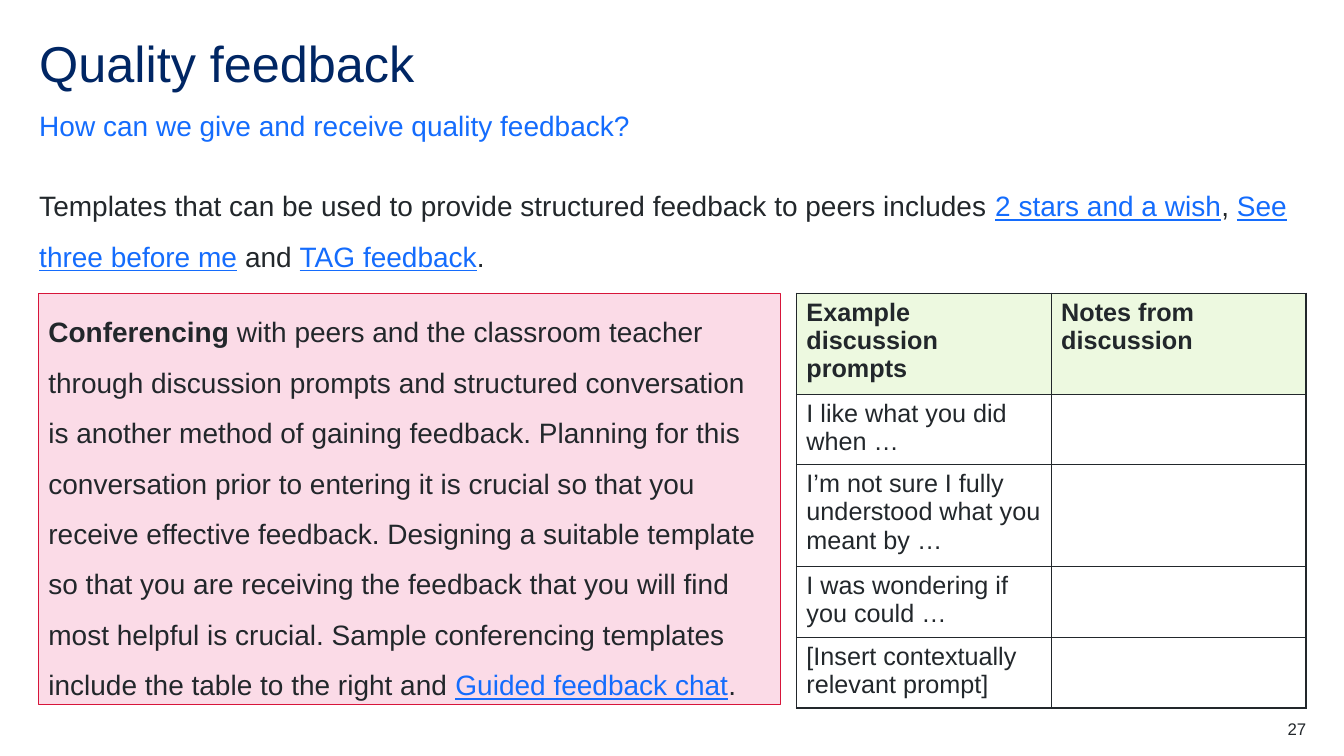
from dataclasses import dataclass

from lxml.etree import SubElement
from pptx import Presentation
from pptx.dml.color import RGBColor
from pptx.enum.shapes import MSO_SHAPE
from pptx.enum.text import MSO_ANCHOR as Anchor, MSO_AUTO_SIZE as AutoSize, PP_ALIGN as Align
from pptx.oxml.ns import qn
from pptx.slide import Slide
from pptx.table import _Cell as Cell
from pptx.text.text import TextFrame, _Paragraph as Paragraph
from pptx.util import Cm, Pt

FONT = "Arial"
NAVY = RGBColor(0x00, 0x26, 0x64)
BLUE = RGBColor(0x14, 0x6C, 0xFD)
INK = RGBColor(0x22, 0x27, 0x2B)
RED = RGBColor(0xD7, 0x15, 0x3A)
PINK = RGBColor(0xFB, 0xDB, 0xE7)
GREEN = RGBColor(0xED, 0xF9, 0xE0)

LEFT = 0.99
CONTENT_WIDTH = 31.9
PANEL_TOP = 7.39


@dataclass(frozen=True)
class Span:
    text: str
    bold: bool = False
    link: bool = False


@dataclass(frozen=True)
class TextBlock:
    """A text box; lengths are in centimetres, sizes in points."""
    spans: tuple[Span, ...]
    left: float
    top: float
    width: float
    height: float
    size: int
    color: RGBColor
    line_spacing: float = 1.0
    space_after: int = 0
    anchor: Anchor = Anchor.TOP
    align: Align = Align.LEFT


TEXT_BLOCKS = (
    TextBlock((Span("Quality feedback"),), LEFT, 0.99, CONTENT_WIDTH, 1.52, 36, NAVY, 0.9),
    TextBlock((Span("How can we give and receive quality feedback?"),),
              LEFT, 2.72, CONTENT_WIDTH, 0.86, 20, BLUE, 1.5, 12, Anchor.BOTTOM),
    TextBlock((
        Span("Templates that can be used to provide structured feedback to peers includes "),
        Span("2 stars and a wish", link=True),
        Span(", "),
        Span("See three before me", link=True),
        Span(" and "),
        Span("TAG feedback", link=True),
        Span("."),
    ), LEFT, 4.34, CONTENT_WIDTH, 2.46, 20, INK, 1.5, 12),
    TextBlock((Span("27"),), 30.91, 18.11, 2.01, 0.51, 12, INK, align=Align.RIGHT),
)

CONFERENCING = (
    Span("Conferencing", bold=True),
    Span(" with peers and the classroom teacher through discussion prompts and structured "
         "conversation is another method of gaining feedback. Planning for this conversation "
         "prior to entering it is crucial so that you receive effective feedback. Designing a "
         "suitable template so that you are receiving the feedback that you will find most "
         "helpful is crucial. Sample conferencing templates include the table to the right and "),
    Span("Guided feedback chat", link=True),
    Span("."),
)

PROMPT_ROWS = (
    ("Example discussion prompts", "Notes from discussion"),
    ("I like what you did when …", ""),
    ("I’m not sure I fully understood what you meant by …", ""),
    ("I was wondering if you could …", ""),
    ("[Insert contextually relevant prompt]", ""),
)
ROW_HEIGHTS = (2.54, 1.78, 2.57, 1.78, 1.78)
COLUMN_WIDTH = 6.42


def style_paragraph(paragraph: Paragraph, size: int, color: RGBColor) -> None:
    font = paragraph.font
    font.name, font.size, font.color.rgb = FONT, Pt(size), color


def write_spans(paragraph: Paragraph, spans: tuple[Span, ...]) -> None:
    for span in spans:
        run = paragraph.add_run()
        run.text = span.text
        if span.bold:
            run.font.bold = True
        if span.link:
            run.font.underline = True
            run.font.color.rgb = BLUE


def clear_margins(frame: TextFrame) -> None:
    frame.margin_left = frame.margin_right = frame.margin_top = frame.margin_bottom = 0


def add_text_block(slide: Slide, block: TextBlock) -> None:
    frame = slide.shapes.add_textbox(
        Cm(block.left), Cm(block.top), Cm(block.width), Cm(block.height)).text_frame
    frame.word_wrap = True
    frame.vertical_anchor = block.anchor
    clear_margins(frame)
    paragraph = frame.paragraphs[0]
    paragraph.alignment = block.align
    paragraph.line_spacing = block.line_spacing
    paragraph.space_after = Pt(block.space_after)
    style_paragraph(paragraph, block.size, block.color)
    write_spans(paragraph, block.spans)


def add_conferencing_panel(slide: Slide) -> None:
    panel = slide.shapes.add_shape(
        MSO_SHAPE.RECTANGLE, Cm(0.97), Cm(PANEL_TOP), Cm(18.69), Cm(10.36))
    panel.shadow.inherit = False
    panel.fill.solid()
    panel.fill.fore_color.rgb = PINK
    panel.line.color.rgb = RED
    panel.line.width = Pt(0.75)
    frame = panel.text_frame
    frame.word_wrap = True
    frame.auto_size = AutoSize.SHAPE_TO_FIT_TEXT
    frame.vertical_anchor = Anchor.TOP
    paragraph = frame.paragraphs[0]
    paragraph.alignment = Align.LEFT
    paragraph.line_spacing = 1.5
    style_paragraph(paragraph, 20, INK)
    write_spans(paragraph, CONFERENCING)


def add_borders(cell: Cell) -> None:
    """Draw all four cell edges; they must precede the fill in the XML."""
    properties = cell._tc.get_or_add_tcPr()
    for edge in ("a:lnL", "a:lnR", "a:lnT", "a:lnB"):
        line = SubElement(properties, qn(edge), w=str(Pt(1)))
        fill = SubElement(line, qn("a:solidFill"))
        SubElement(fill, qn("a:srgbClr"), val=str(INK))


def add_prompt_table(slide: Slide) -> None:
    table = slide.shapes.add_table(
        len(PROMPT_ROWS), 2, Cm(20.07), Cm(PANEL_TOP),
        Cm(2 * COLUMN_WIDTH), Cm(sum(ROW_HEIGHTS))).table
    table.first_row = table.horz_banding = False
    for column in table.columns:
        column.width = Cm(COLUMN_WIDTH)
    for row_index, (texts, height) in enumerate(zip(PROMPT_ROWS, ROW_HEIGHTS)):
        row = table.rows[row_index]
        row.height = Cm(height)
        is_header = row_index == 0
        for cell, text in zip(row.cells, texts):
            add_borders(cell)
            if is_header:
                cell.fill.solid()
                cell.fill.fore_color.rgb = GREEN
            else:
                cell.fill.background()
            cell.text = text
            paragraph = cell.text_frame.paragraphs[0]
            style_paragraph(paragraph, 18, INK)
            paragraph.font.bold = is_header


def main() -> None:
    presentation = Presentation()
    presentation.slide_width, presentation.slide_height = Cm(33.87), Cm(19.05)
    slide = presentation.slides.add_slide(presentation.slide_layouts[6])
    for block in TEXT_BLOCKS:
        add_text_block(slide, block)
    add_conferencing_panel(slide)
    add_prompt_table(slide)
    presentation.save("out.pptx")


if __name__ == "__main__":
    main()
